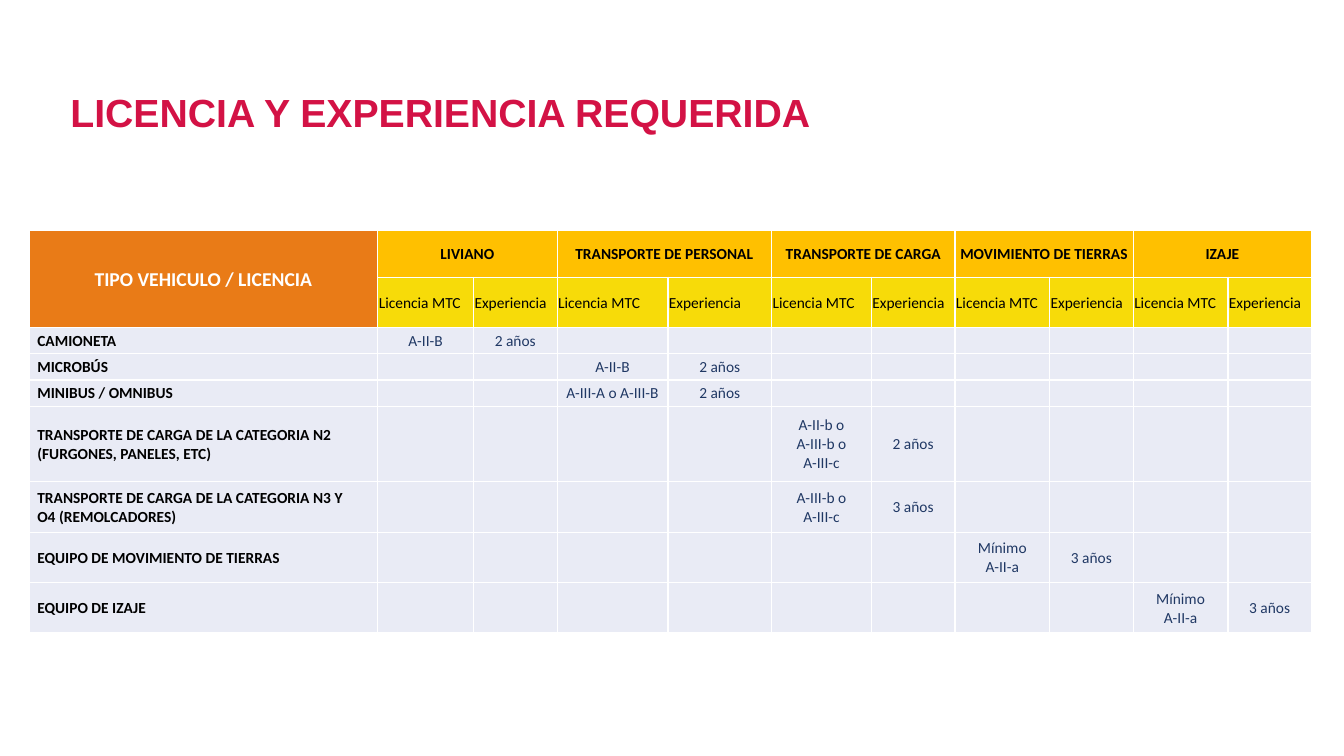
import dataclasses

import pptx
import pptx.dml.color
import pptx.enum.text
import pptx.oxml.ns
import pptx.util
from lxml import etree

Inches = pptx.util.Inches
Pt = pptx.util.Pt
Color = pptx.dml.color.RGBColor.from_string
Align = pptx.enum.text.PP_ALIGN
Anchor = pptx.enum.text.MSO_ANCHOR
qn = pptx.oxml.ns.qn


@dataclasses.dataclass(frozen=True)
class Theme:
    red: str = "D31245"
    orange: str = "E97B17"
    amber: str = "FFC000"
    yellow: str = "F7DB09"
    pale: str = "E9EBF5"
    navy: str = "203864"
    black: str = "000000"
    white: str = "FFFFFF"
    head: str = "Arial"
    body: str = "Calibri"
    title: int = 28
    lead: int = 14
    small: int = 11


THEME = Theme()
COLS = [3.46] + [0.95, 0.83, 1.1, 1.03, 0.99, 0.83] + [0.94, 0.83] * 2
ROWS = [0.46, 0.5] + [0.26] * 3 + [0.75] + [0.5] * 3
GROUPS = ["LIVIANO", "TRANSPORTE DE PERSONAL", "TRANSPORTE DE CARGA",
          "MOVIMIENTO DE TIERRAS", "IZAJE"]
PAIR = ["Licencia MTC", "Experiencia"]
TYPES = [
    ("CAMIONETA", 0, "A-II-B", "2 años"),
    ("MICROBÚS", 1, "A-II-B", "2 años"),
    ("MINIBUS / OMNIBUS", 1, "A-III-A o A-III-B", "2 años"),
    ("TRANSPORTE DE CARGA DE LA CATEGORIA N2\n(FURGONES, PANELES, ETC)",
     2, "A-II-b o\nA-III-b o\nA-III-c", "2 años"),
    ("TRANSPORTE DE CARGA DE LA CATEGORIA N3 Y\nO4 (REMOLCADORES)",
     2, "A-III-b o\nA-III-c", "3 años"),
    ("EQUIPO DE MOVIMIENTO DE TIERRAS", 3, "Mínimo\nA-II-a", "3 años"),
    ("EQUIPO DE IZAJE", 4, "Mínimo\nA-II-a", "3 años"),
]


def write(frame, text, size=THEME.small, font=THEME.body, color=THEME.black,
          bold=False, align=Align.LEFT, space=1.0):
    for i, line in enumerate(text.split("\n")):
        para = frame.paragraphs[0] if i == 0 else frame.add_paragraph()
        para.alignment = align
        para.line_spacing = space
        if not line:
            end = etree.SubElement(para._p, qn("a:endParaRPr"))
            end.set("sz", str(size * 100))
            continue
        run = para.add_run()
        run.text = line
        run.font.size = Pt(size)
        run.font.name = font
        run.font.bold = bold
        run.font.color.rgb = Color(color)


def paint(cell, fill):
    props = cell._tc.get_or_add_tcPr()
    for side in ("lnL", "lnR", "lnT", "lnB"):
        line = etree.SubElement(props, qn(f"a:{side}"), w=str(Pt(1)))
        solid = etree.SubElement(line, qn("a:solidFill"))
        etree.SubElement(solid, qn("a:srgbClr"), val=THEME.white)
    cell.fill.solid()
    cell.fill.fore_color.rgb = Color(fill)


def set_cell(cell, text, fill, left=0.01, **form):
    paint(cell, fill)
    cell.margin_left = Inches(left)
    cell.margin_right = cell.margin_top = Inches(0.01)
    cell.margin_bottom = 0
    cell.vertical_anchor = Anchor.MIDDLE
    write(cell.text_frame, text, **form)


def add_title(slide, x, y, w, h):
    box = slide.shapes.add_textbox(Inches(x), Inches(y), Inches(w), Inches(h))
    frame = box.text_frame
    frame.word_wrap = True
    frame.vertical_anchor = Anchor.MIDDLE
    write(frame, "LICENCIA Y EXPERIENCIA REQUERIDA", size=THEME.title,
          font=THEME.head, color=THEME.red, bold=True, space=0.9)


def fill_head(table):
    set_cell(table.cell(0, 0), "TIPO VEHICULO / LICENCIA", THEME.orange,
             size=THEME.lead, color=THEME.white, bold=True, align=Align.CENTER)
    paint(table.cell(1, 0), THEME.orange)
    table.cell(0, 0).merge(table.cell(1, 0))
    for i, group in enumerate(GROUPS):
        col = 1 + 2 * i
        first, last = table.cell(0, col), table.cell(0, col + 1)
        set_cell(first, group, THEME.amber, bold=True, align=Align.CENTER)
        paint(last, THEME.amber)
        first.merge(last)
        for j, label in enumerate(PAIR):
            set_cell(table.cell(1, col + j), label, THEME.yellow)


def fill_body(table):
    for row, (name, group, *pair) in enumerate(TYPES, 2):
        set_cell(table.cell(row, 0), name, THEME.pale, left=0.08, bold=True)
        texts = [""] * (2 * len(GROUPS))
        texts[2 * group:2 * group + 2] = pair
        for col, text in enumerate(texts, 1):
            set_cell(table.cell(row, col), text, THEME.pale,
                     color=THEME.navy, align=Align.CENTER)


def add_grid(slide, x, y, w, h):
    table = slide.shapes.add_table(len(ROWS), len(COLS), Inches(x), Inches(y),
                                   Inches(w), Inches(h)).table
    table.first_row = table.horz_banding = False
    for col, width in zip(table.columns, COLS):
        col.width = Inches(w * width / sum(COLS))
    for row, height in zip(table.rows, ROWS):
        row.height = Inches(h * height / sum(ROWS))
    fill_head(table)
    fill_body(table)


def main():
    deck = pptx.Presentation()
    deck.slide_width = Inches(13.33)
    deck.slide_height = Inches(7.5)
    slide = deck.slides.add_slide(deck.slide_layouts[6])
    add_title(slide, 0.6, 0.7, 10.49, 0.88)
    add_grid(slide, 0.29, 2.29, 12.72, 3.99)
    deck.save("out.pptx")


if __name__ == "__main__":
    main()
